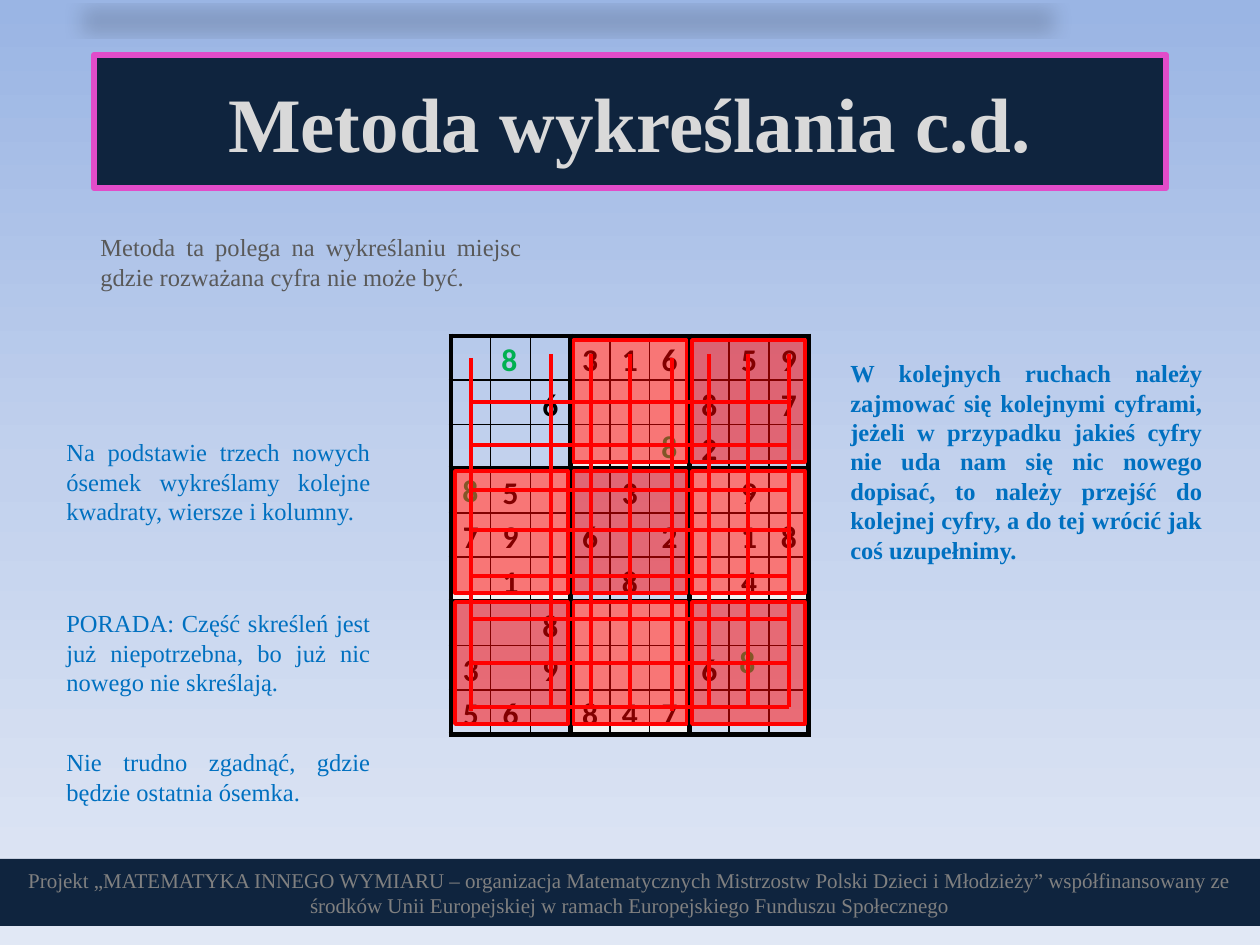
from copy import deepcopy

from lxml.etree import SubElement
from pptx import Presentation
from pptx.dml.color import RGBColor
from pptx.enum.shapes import MSO_CONNECTOR as Connector, MSO_SHAPE as Preset
from pptx.enum.text import MSO_ANCHOR as Anchor, PP_ALIGN as Align
from pptx.oxml import parse_xml
from pptx.oxml.ns import nsdecls, qn
from pptx.util import Emu, Pt

# Content
TITLE = "Metoda wykreślania c.d."
FOOTER = ("Projekt „MATEMATYKA INNEGO WYMIARU – organizacja Matematycznych Mistrzostw "
          "Polski Dzieci i Młodzieży” współfinansowany ze środków Unii Europejskiej "
          "w ramach Europejskiego Funduszu Społecznego")
NOTES = [  # text, place in px, style
    ("Metoda ta polega na wykreślaniu miejsc gdzie rozważana cyfra nie może być.",
     (88, 226, 446, 72), "intro"),
    ("Na podstawie trzech nowych ósemek wykreślamy kolejne kwadraty, wiersze i kolumny.",
     (54, 431, 329, 102), "note"),
    ("PORADA: Część skreśleń jest już niepotrzebna, bo już nic nowego nie skreślają.",
     (54, 602, 329, 102), "note"),
    ("Nie trudno zgadnąć, gdzie będzie ostatnia ósemka.", (54, 741, 329, 72), "note"),
    ("W kolejnych ruchach należy zajmować się kolejnymi cyframi, jeżeli w przypadku "
     "jakieś cyfry nie uda nam się nic nowego dopisać, to należy przejść do kolejnej "
     "cyfry, a do tej wrócić jak coś uzupełnimy.", (838, 352, 377, 220), "advice"),
]
SUDOKU = ["...316.59",
          "..6...8.7",
          "......2..",
          ".5..3..9.",
          "79.6.2.18",
          ".1..8..4.",
          "..8......",
          "3.9...6..",
          "56.847..."]
# Crossings out from back to front: rows (y), blocks (row, column),
# columns (x, top) and found eights (left, top)
LAYERS = [
    ("row", [402, 530, 576, 619, 707]),
    ("block", [(0, 2), (1, 2), (1, 1), (2, 0), (2, 1)]),
    ("column", [(551, 354), (591, 354), (630, 354), (709, 354), (789, 354)]),
    ("eight", [(649, 421), (450, 465), (727, 636)]),
    ("block", [(0, 1), (1, 0), (2, 2)]),
    ("row", [445, 490, 663]),
    ("column", [(471, 358), (672, 358), (748, 354)]),
    ("eight", [(489, 334)]),
]

THEME = {
    "sky": [(0, "9AB5E4"), (0.5, "C2D1ED"), (1, "E1E8F5")],
    "navy": "0F243E", "pink": "E24CC9", "red": "FF0000", "shade": "F2F2F2", "grid": "000000",
    "title": dict(name="Times New Roman", size=44, color="D9D9D9", bold=True),
    "footer": dict(name="Times New Roman", size=12, color="808080", bold=False),
    "intro": dict(name="Times New Roman", size=14, color="595959", bold=False),
    "note": dict(name="Times New Roman", size=14, color="0070C0", bold=False),
    "advice": dict(name="Times New Roman", size=14, color="0070C0", bold=True),
    "digit": dict(name="Calibri", size=18, color="000000", bold=True),
    "eight": dict(name="Calibri", size=18, color="00B050", bold=True),
}


def px(count):
    return Emu(round(count * 914400 / 126))


def place(*lengths):
    return [px(length) for length in lengths]


def rgb(code):
    return RGBColor.from_string(code)


def write(frame, text, style, align, anchor=None):
    frame.word_wrap = True
    if anchor is not None:
        frame.vertical_anchor = anchor
    para = frame.paragraphs[0]
    para.alignment = align
    span = para.add_run()
    span.text = text
    values = dict(THEME[style])
    span.font.color.rgb = rgb(values.pop("color"))
    values["size"] = Pt(values["size"])
    for name, value in values.items():
        setattr(span.font, name, value)
    return para


def paint(shape, fill, line=None, width=0):
    shape.fill.solid()
    shape.fill.fore_color.rgb = rgb(fill)
    if line:
        shape.line.color.rgb = rgb(line)
        shape.line.width = Pt(width)
    else:
        shape.line.fill.background()


def add_text(page, text, box, style, align):
    return write(page.shapes.add_textbox(*place(*box)).text_frame, text, style, align)


def add_rect(page, box, *colours):
    shape = page.shapes.add_shape(Preset.RECTANGLE, *place(*box))
    shape.shadow.inherit = False
    paint(shape, *colours)
    return shape


# Marks on the sudoku
def add_line(page, *ends):
    line = page.shapes.add_connector(Connector.STRAIGHT, *place(*ends))
    line.line.color.rgb = rgb(THEME["red"])
    line.line.width = Pt(2)
    SubElement(line.element.spPr, qn("a:effectLst"))


def add_row(page, y):
    add_line(page, 471, y, 789, y)


def add_column(page, mark):
    x, top = mark
    add_line(page, x, top, x, top + 353)


def add_block(page, mark):
    row, column = mark
    box = (455 + 118.5 * column, 340 + 131 * row, 113, 122)
    shape = add_rect(page, box, THEME["red"], THEME["red"], 2)
    colour = shape.element.spPr.find(qn("a:solidFill"))[0]
    SubElement(colour, qn("a:alpha"), val="51000")


def add_eight(page, mark):
    add_text(page, "8", (*mark, 43, 50), "eight", Align.LEFT)


MARKS = {"row": add_row, "column": add_column, "block": add_block, "eight": add_eight}


def set_borders(cell, row, column):
    thick = {"L": column % 3 == 0, "R": column % 3 == 2, "T": row % 3 == 0, "B": row % 3 == 2}
    for side, is_thick in thick.items():
        cell._tc.get_or_add_tcPr().append(parse_xml(
            f'<a:ln{side} {nsdecls("a")} w="{Pt(3 if is_thick else 1)}"><a:solidFill>'
            f'<a:srgbClr val="{THEME["grid"]}"/></a:solidFill></a:ln{side}>'))


def add_sudoku(page):
    table = page.shapes.add_table(9, 9, *place(451, 336, 358, 396)).table
    table.first_row = table.horz_banding = False
    for column in table.columns:
        column.width = px(358 / 9)
    for row, digits in enumerate(SUDOKU):
        table.rows[row].height = px(44)
        for column, digit in enumerate(digits):
            cell = table.cell(row, column)
            margins = dict(margin_left=px(9), margin_right=px(9), margin_top=0, margin_bottom=0)
            for name, value in margins.items():
                setattr(cell, name, value)
            cell.vertical_anchor = Anchor.MIDDLE
            set_borders(cell, row, column)
            if (row // 3 + column // 3) % 2:
                cell.fill.solid()
                cell.fill.fore_color.rgb = rgb(THEME["shade"])
            else:
                cell.fill.background()
            if digit != ".":
                para = write(cell.text_frame, digit, "digit", Align.CENTER)
                para.line_spacing = 1.15


def set_background(page):
    fill = page.background.fill
    fill.gradient()
    fill.gradient_angle = 270
    stops = next(page.element.iter(qn("a:gsLst")))
    stops.append(deepcopy(stops[0]))
    for stop, (position, colour) in zip(fill.gradient_stops, THEME["sky"]):
        stop.position = position
        stop.color.rgb = rgb(colour)


def format_title(page):
    title = page.shapes.title
    title.left, title.top, title.width, title.height = place(94, 55, 1072, 133)
    paint(title, THEME["navy"], THEME["pink"], 3.5)
    write(title.text_frame, TITLE, "title", Align.CENTER, Anchor.MIDDLE)
    # Flattened shadow below the frame
    title.element.spPr.append(parse_xml(
        f'<a:effectLst {nsdecls("a")}><a:outerShdw blurRad="{Pt(12)}" dist="{Pt(25)}" '
        'dir="5400000" sx="90000" sy="-19000" rotWithShape="0"><a:srgbClr val="000000">'
        '<a:alpha val="15000"/></a:srgbClr></a:outerShdw></a:effectLst>'))
    title.element.getparent().append(title.element)


def main():
    deck = Presentation()
    deck.slide_width, deck.slide_height = place(1260, 945)
    page = deck.slides.add_slide(deck.slide_layouts[5])
    set_background(page)
    add_sudoku(page)
    for kind, marks in LAYERS:
        for mark in marks:
            MARKS[kind](page, mark)
    for text, box, style in NOTES:
        add_text(page, text, box, style, Align.JUSTIFY)
    footer = add_rect(page, (0, 859, 1260, 67), THEME["navy"])
    write(footer.text_frame, FOOTER, "footer", Align.CENTER, Anchor.MIDDLE)
    format_title(page)
    deck.save("out.pptx")


if __name__ == "__main__":
    main()
